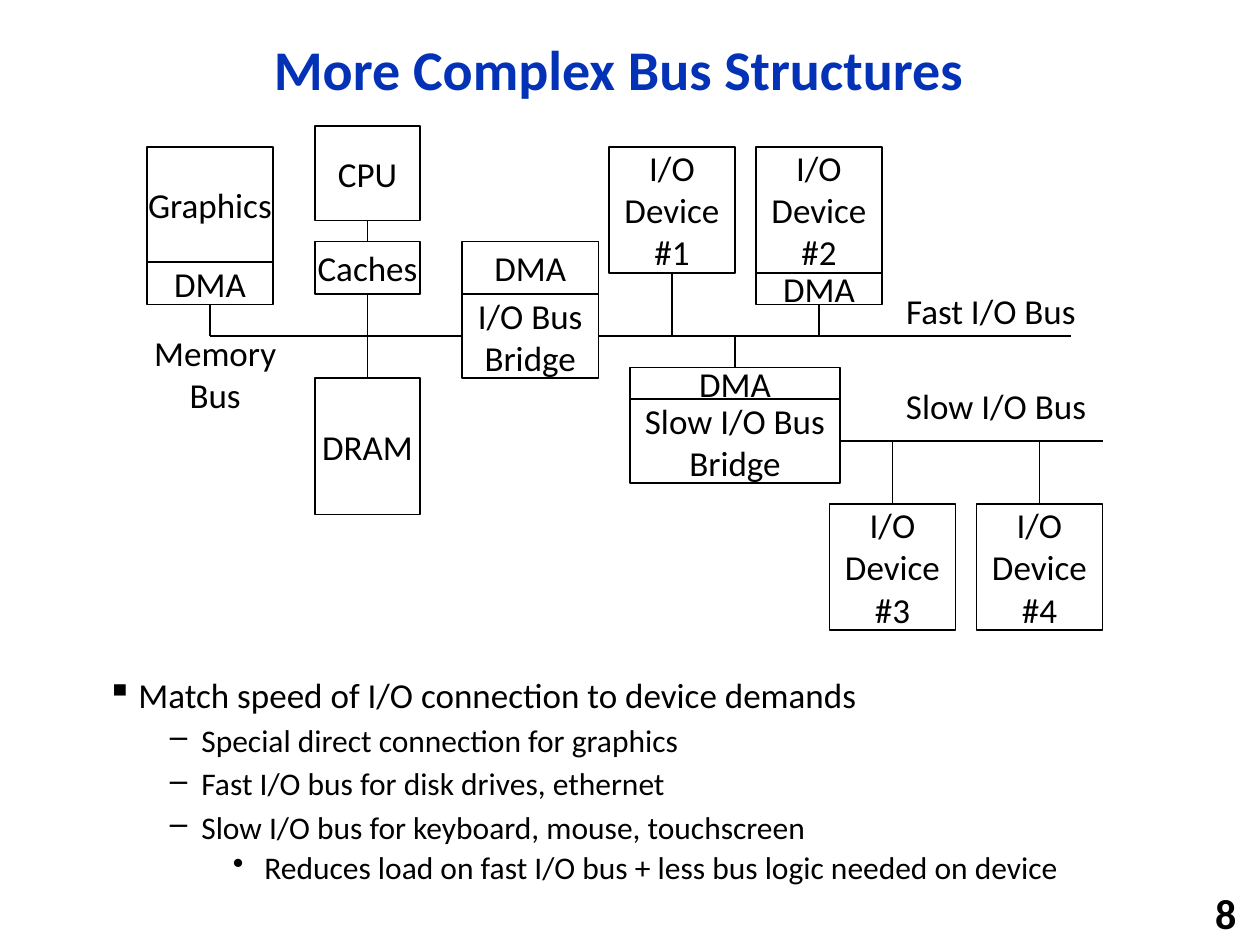
import pptx
import pptx.dml.color
import pptx.enum.shapes
import pptx.enum.text
import pptx.oxml.ns
import pptx.util
from lxml import etree
from pptx.util import Inches

BLACK = pptx.dml.color.RGBColor(0, 0, 0)
WHITE = pptx.dml.color.RGBColor(255, 255, 255)
BLUE = pptx.dml.color.RGBColor(0x03, 0x32, 0xB7)
FONT = "Calibri"
ALIGN = pptx.enum.text.PP_ALIGN
ANCHOR = pptx.enum.text.MSO_ANCHOR
TOP, LEFT, BOTTOM, RIGHT = range(4)

# Heights of the two I/O buses, in grid steps
FAST_BUS = 32
SLOW_BUS = 42

# Name: text, left, top, width, height in grid steps
UNITS = {
    "cpu": ("CPU", 30, 12, 10, 9),
    "caches": ("Caches", 30, 23, 10, 5),
    "dram": ("DRAM", 30, 36, 10, 13),
    "graphics": ("Graphics", 14, 14, 12, 11),
    "bridge": ("I/O Bus Bridge", 44, 28, 13, 8),
    "slow bridge": ("Slow I/O Bus Bridge", 60, 38, 20, 8),
    "device 1": ("I/O Device #1", 58, 14, 12, 12),
    "device 2": ("I/O Device #2", 72, 14, 12, 12),
    "device 3": ("I/O Device #3", 79, 48, 12, 12),
    "device 4": ("I/O Device #4", 93, 48, 12, 12),
}
# DMA boxes, which cover the stubs behind them
DMA_BOXES = [(14, 25, 12, 4), (44, 23, 13, 5), (60, 35, 20, 3), (72, 26, 12, 3)]
STUBS = [
    ("graphics", BOTTOM, FAST_BUS),
    ("device 1", BOTTOM, FAST_BUS),
    ("device 2", BOTTOM, FAST_BUS),
    ("slow bridge", TOP, FAST_BUS),
    ("device 3", TOP, SLOW_BUS),
    ("device 4", TOP, SLOW_BUS),
]
BUSES = [
    ("bridge", LEFT, 20, FAST_BUS),
    ("bridge", RIGHT, 102, FAST_BUS),
    ("slow bridge", RIGHT, 105, SLOW_BUS),
]
LABELS = [
    ("Memory Bus", 12, 31, 17, 9.2),
    (" Fast I/O Bus", 84, 27, 20, 5.3),
    (" Slow I/O Bus", 83, 36, 23, 5.3),
]
# Level and text
BULLETS = [
    (0, "Match speed of I/O connection to device demands"),
    (1, "Special direct connection for graphics"),
    (1, "Fast I/O bus for disk drives, ethernet"),
    (1, "Slow I/O bus for keyboard, mouse, touchscreen"),
    (2, "Reduces load on fast I/O bus + less bus logic needed on device"),
]
# Mark, size, line spacing for each level
LEVELS = [("▪", 20, 0.9), ("–", 18, 0.9), ("•", 18, 0.8)]


def grid(steps):
    """The diagram sits on a grid of twelve steps to the inch."""
    return Inches(steps / 12)


def style_text(para, size, color=BLACK, bold=False, align=ALIGN.CENTER):
    para.alignment = align
    for span in para.runs:
        span.font.name = FONT
        span.font.size = pptx.util.Pt(size)
        span.font.bold = bold
        span.font.color.rgb = color


def add_text(page, text, place, size, anchor=ANCHOR.TOP, **style):
    box = page.shapes.add_textbox(*place)
    frame = box.text_frame
    frame.word_wrap = True
    frame.vertical_anchor = anchor
    frame.text = text
    style_text(frame.paragraphs[0], size, **style)
    return box


def add_unit(page, text, *place):
    box = page.shapes.add_shape(
        pptx.enum.shapes.MSO_SHAPE.RECTANGLE, *map(grid, place))
    box.shadow.inherit = False
    box.fill.solid()
    box.fill.fore_color.rgb = WHITE
    box.line.color.rgb = BLACK
    box.line.width = pptx.util.Pt(1)
    frame = box.text_frame
    frame.word_wrap = True
    frame.vertical_anchor = ANCHOR.MIDDLE
    frame.margin_left = frame.margin_right = 0
    frame.margin_top = frame.margin_bottom = 0
    frame.text = text
    style_text(frame.paragraphs[0], 20)
    return box


def add_wire(page, box, side, x, y):
    """Draw a line from the middle of a box side to the point x, y."""
    wire = page.shapes.add_connector(
        pptx.enum.shapes.MSO_CONNECTOR.STRAIGHT, x, y, x, y)
    wire.begin_connect(box, side)
    wire.line.color.rgb = BLACK
    wire.line.width = pptx.util.Pt(1)
    etree.SubElement(wire._element.spPr, pptx.oxml.ns.qn("a:effectLst"))
    return wire


def middle(box):
    return box.left + box.width // 2


def add_bullets(page):
    box = page.shapes.add_textbox(
        Inches(0.75), Inches(5.33), Inches(8.4), Inches(1.61))
    frame = box.text_frame
    frame.word_wrap = True
    frame.text = "\n".join(text for level, text in BULLETS)
    for para, (level, text) in zip(frame.paragraphs, BULLETS):
        mark, size, spacing = LEVELS[level]
        style_text(para, size, align=ALIGN.LEFT)
        para.level = level
        para.line_spacing = spacing
        para.space_before = pptx.util.Pt(0.3 * size)
        properties = para._p.get_or_add_pPr()
        properties.set("marL", str(Inches(0.25 + 0.5 * level)))
        properties.set("indent", str(Inches(-0.25)))
        bullet = etree.SubElement(properties, pptx.oxml.ns.qn("a:buChar"))
        bullet.set("char", mark)


def add_diagram(page):
    # Units
    units = {name: add_unit(page, *unit) for name, unit in UNITS.items()}

    # Buses and the stubs that lead to them
    for name, side, end, height in BUSES:
        add_wire(page, units[name], side, grid(end), grid(height))
    for name, side, height in STUBS:
        add_wire(page, units[name], side, middle(units[name]), grid(height))

    # Processor column
    for upper, lower in (("cpu", "caches"), ("caches", "dram")):
        target = units[lower]
        wire = add_wire(page, units[upper], BOTTOM, middle(target), target.top)
        wire.end_connect(target, TOP)

    # DMA parts and bus names
    for place in DMA_BOXES:
        add_unit(page, "DMA", *place)
    for text, *place in LABELS:
        add_text(page, text, map(grid, place), 20)


def main():
    deck = pptx.Presentation()
    deck.slide_width = Inches(10)
    deck.slide_height = Inches(7.5)
    page = deck.slides.add_slide(deck.slide_layouts[6])

    # Title
    title = add_text(page, "More Complex Bus Structures",
                     map(Inches, (0.92, 0.17, 7.98, 0.81)), 32,
                     ANCHOR.MIDDLE, color=BLUE, bold=True)
    title.text_frame.paragraphs[0].line_spacing = 0.9

    add_bullets(page)

    # Page number
    add_text(page, "8", map(Inches, (7.83, 7.08, 2.08, 0.32)), 24,
             ANCHOR.MIDDLE, bold=True, align=ALIGN.RIGHT)

    add_diagram(page)
    deck.save("out.pptx")


if __name__ == "__main__":
    main()
